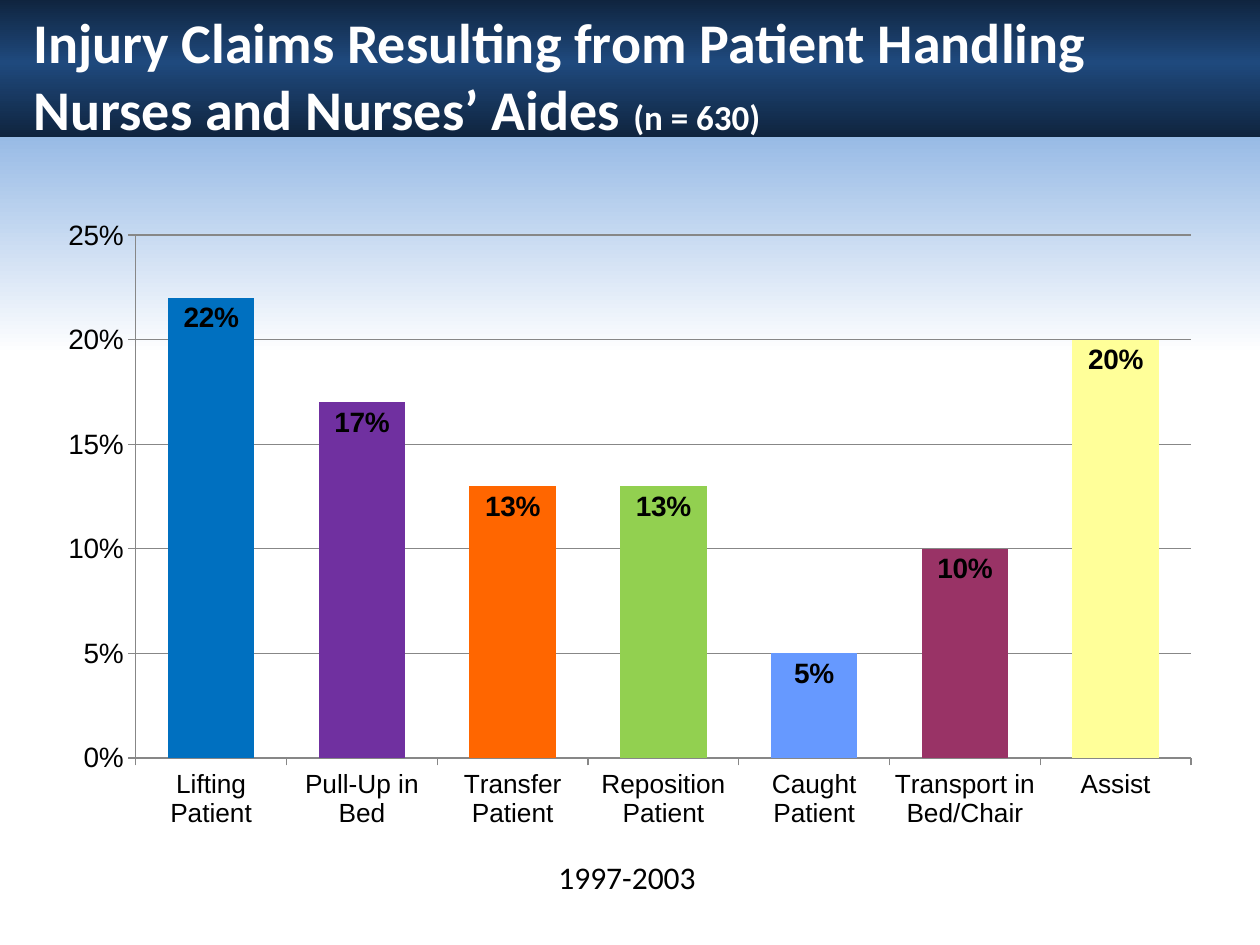
from dataclasses import dataclass

from lxml import etree
from pptx import Presentation
from pptx.chart.data import CategoryChartData
from pptx.dml.color import RGBColor
from pptx.enum import chart as ch, shapes, text
from pptx.oxml import ns, parse_xml
from pptx.util import Pt

GRID = "878787"


@dataclass
class Band:
    """A full-width rectangle with a top-to-bottom gradient of (percent, colour) stops."""
    left: float
    top: float
    width: float
    height: float
    stops: list[tuple[int, str]]


@dataclass
class Claim:
    cause: str
    share: float
    color: str


BANDS = [
    Band(-1, 66, 722, 471, [(0, "8EB4E3"), (29, "FFFFFF"), (100, "FFFFFF")]),
    Band(-2, -0.75, 723, 79.25, [(0, "0F243E"), (46, "1F497D"), (100, "0F243E")]),
]

CLAIMS = [
    Claim("Lifting Patient", 0.22, "0070C0"),
    Claim("Pull-Up in Bed", 0.17, "7030A0"),
    Claim("Transfer Patient", 0.13, "FF6600"),
    Claim("Reposition Patient", 0.13, "92D050"),
    Claim("Caught Patient", 0.05, "6699FF"),
    Claim("Transport in Bed/Chair", 0.1, "993366"),
    Claim("Assist", 0.2, "FFFF99"),
]


def rgb(color: str) -> RGBColor:
    return RGBColor.from_string(color)


def style(font, size: float, name: str = "Calibri", color: str = "000000",
          bold: bool = False) -> None:
    font.size, font.name, font.bold = Pt(size), name, bold
    font.color.rgb = rgb(color)


def add_run(p, content: str, **fmt) -> None:
    r = p.add_run()
    r.text = content
    style(r.font, **fmt)


def add_text_box(s, left: float, top: float, width: float, height: float,
                 anchor=text.MSO_ANCHOR.TOP):
    """Add an empty wrapping text box and return its first paragraph."""
    tf = s.shapes.add_textbox(Pt(left), Pt(top), Pt(width), Pt(height)).text_frame
    tf.word_wrap = True
    tf.vertical_anchor = anchor
    return tf.paragraphs[0]


def add_band(s, band: Band) -> None:
    sp = s.shapes.add_shape(shapes.MSO_SHAPE.RECTANGLE, Pt(band.left), Pt(band.top),
                            Pt(band.width), Pt(band.height))
    sp.shadow.inherit = False
    sp.line.fill.background()
    sp.fill.gradient()
    sp.fill.gradient_angle = 270
    stop_list = sp.element.spPr.find(".//" + ns.qn("a:gsLst"))
    for old in list(stop_list):
        stop_list.remove(old)
    for percent, color in band.stops:
        stop = etree.SubElement(stop_list, ns.qn("a:gs"), pos=str(percent * 1000))
        etree.SubElement(stop, ns.qn("a:srgbClr"), val=color)


def style_axis(axis, size: float) -> None:
    style(axis.tick_labels.font, size, name="Arial")
    axis.major_tick_mark = ch.XL_TICK_MARK.OUTSIDE
    axis.minor_tick_mark = ch.XL_TICK_MARK.NONE
    axis.format.line.color.rgb = rgb(GRID)
    axis.format.line.width = Pt(0.75)


def set_plot_area(chart, x: float, y: float, w: float, h: float) -> None:
    """Place the inner plot area, in fractions of the chart."""
    area = chart.element.find(".//" + ns.qn("c:plotArea"))
    for old in area.findall(ns.qn("c:layout")):
        area.remove(old)
    area.insert(0, parse_xml(
        f'<c:layout {ns.nsdecls("c")}><c:manualLayout><c:layoutTarget val="inner"/>'
        '<c:xMode val="edge"/><c:yMode val="edge"/>'
        f'<c:x val="{x}"/><c:y val="{y}"/><c:w val="{w}"/><c:h val="{h}"/>'
        '</c:manualLayout></c:layout>'))


def add_claims_chart(s) -> None:
    data = CategoryChartData(number_format="0%")
    data.categories = [claim.cause for claim in CLAIMS]
    data.add_series("Series 1", [claim.share for claim in CLAIMS])
    chart = s.shapes.add_chart(ch.XL_CHART_TYPE.COLUMN_CLUSTERED, Pt(24), Pt(120),
                               Pt(670), Pt(360), data).chart
    chart.has_title = chart.has_legend = False
    style(chart.font, 18)
    set_plot_area(chart, 0.08, 0.04, 0.9, 0.83)

    style_axis(chart.category_axis, 15)
    values = chart.value_axis
    style_axis(values, 16)
    values.minimum_scale, values.maximum_scale, values.major_unit = 0, 0.25, 0.05
    values.tick_labels.number_format = "0%"
    values.tick_labels.number_format_is_linked = False
    values.has_major_gridlines = True
    values.major_gridlines.format.line.color.rgb = rgb(GRID)
    values.major_gridlines.format.line.width = Pt(0.75)

    plot = chart.plots[0]
    plot.vary_by_categories = False
    plot.gap_width, plot.overlap = 74, -21
    series = plot.series[0]
    for i, claim in enumerate(CLAIMS):
        fill = series.points[i].format.fill
        fill.solid()
        fill.fore_color.rgb = rgb(claim.color)

    labels = series.data_labels
    labels.show_value = True
    labels.position = ch.XL_LABEL_POSITION.INSIDE_END
    labels.number_format = "0%"
    labels.number_format_is_linked = False
    style(labels.font, 16, name="Arial", bold=True)


def main() -> None:
    prs = Presentation()
    prs.slide_width, prs.slide_height = Pt(720), Pt(540)
    s = prs.slides.add_slide(prs.slide_layouts[6])
    for band in BANDS:
        add_band(s, band)

    title = add_text_box(s, 12, 24.5, 672, 60, anchor=text.MSO_ANCHOR.BOTTOM)
    white_bold = dict(color="FFFFFF", bold=True)
    add_run(title, "Injury Claims Resulting from Patient Handling", size=32, **white_bold)
    title.add_line_break()
    add_run(title, "Nurses and Nurses’ Aides ", size=32, **white_bold)
    add_run(title, "(n = 630)", size=20, **white_bold)

    add_claims_chart(s)
    add_run(add_text_box(s, 312, 487, 101.5, 29), "1997-2003", size=18)
    prs.save("out.pptx")


if __name__ == "__main__":
    main()
